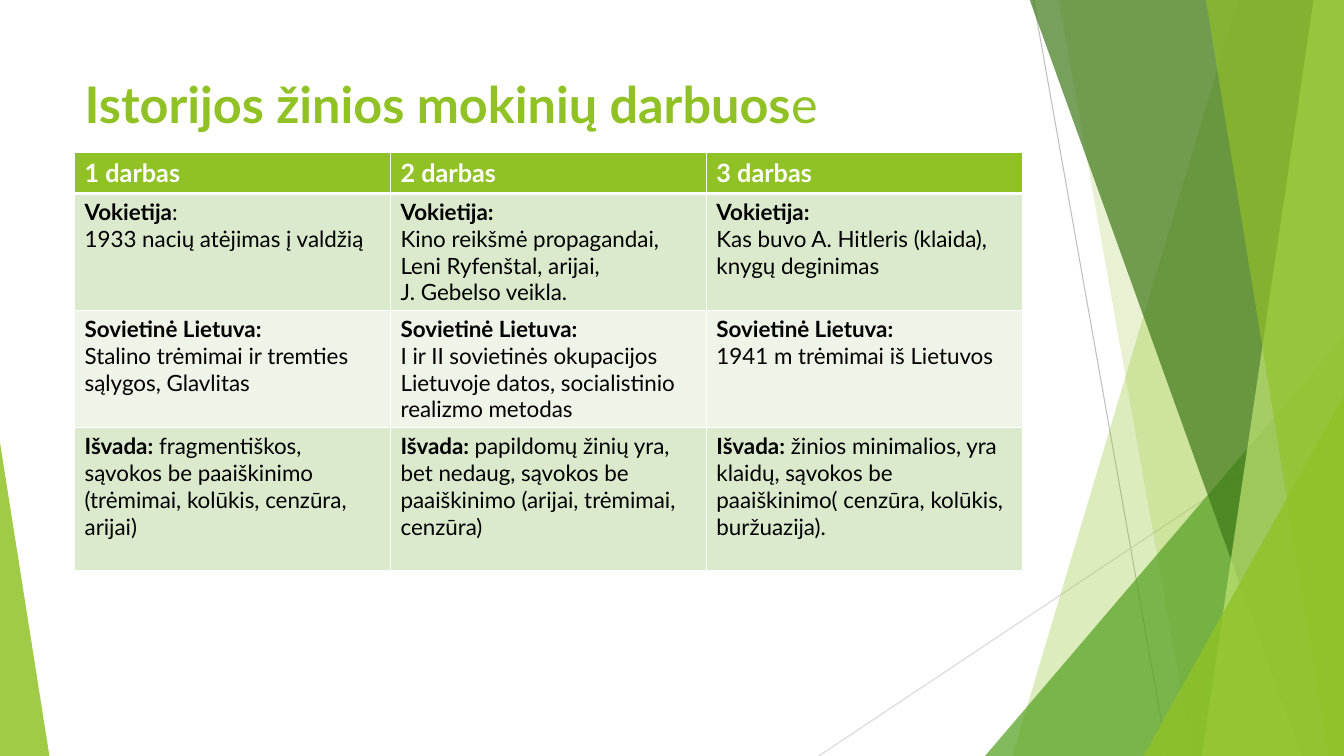
import pptx
import pptx.util
import pptx.dml.color
import pptx.enum.shapes
import pptx.enum.text
import pptx.oxml
import pptx.oxml.ns

Inches = pptx.util.Inches
Pt = pptx.util.Pt
SHAPES = pptx.enum.shapes

THEME = {
    "font": "Lato",
    "title_size": 36, "header_size": 18, "body_size": 16,
    "lime": "90C226", "green": "54A021", "forest": "3F7819", "pale": "C0E474",
    "grey": "BFBFBF", "light_grey": "D9D9D9",
    "white": "FFFFFF", "black": "000000",
    "band_dark": "DBE9CD", "band_light": "EEF4E8",
}


def paint(fill, color, opacity=100):
    fill.solid()
    fill.fore_color.rgb = pptx.dml.color.RGBColor.from_string(THEME[color])
    if opacity < 100:
        rgb = fill._xPr.find(".//" + pptx.oxml.ns.qn("a:srgbClr"))
        alpha = pptx.oxml.parse_xml(
            f'<a:alpha {pptx.oxml.ns.nsdecls("a")} val="{opacity * 1000}"/>')
        rgb.append(alpha)


def write(paragraph, runs, size, color):
    for text, bold in runs:
        run = paragraph.add_run()
        run.text = text
        formats = {"name": THEME["font"], "size": Pt(THEME[size]), "bold": bold}
        for attribute, value in formats.items():
            setattr(run.font, attribute, value)
        paint(run.font.fill, color)


deck = pptx.Presentation()
deck.slide_width, deck.slide_height = Inches(13.33), Inches(7.5)
slide = deck.slides.add_slide(deck.slide_layouts[5])

# Thin lines behind the facets
for x1, y1, x2, y2, color in [
    (10.25, 0, 11.58, 7.5, "grey"),
    (13.33, 4.03, 8.12, 7.5, "light_grey"),
]:
    ray = slide.shapes.add_connector(
        SHAPES.MSO_CONNECTOR.STRAIGHT, Inches(x1), Inches(y1), Inches(x2), Inches(y2))
    ray.line.width = Pt(0.75)
    paint(ray.line.fill, color)
    ray._element.spPr.append(
        pptx.oxml.parse_xml(f'<a:effectLst {pptx.oxml.ns.nsdecls("a")}/>'))

# Facets: bands as (top x, bottom x), wedges as (left, top, width, height, apex)
facets = [
    ((12.28, 10.04), "lime", 30),
    ((10.5, 11.83), "lime", 20),
    ((9.77, 3.33, 3.56, 4.17, 1), "green", 72),
    ((10.21, 12.91), "forest", 70),
    ((13.03, 11.92), "pale", 70),
    ((11.96, 13.18), "lime", 65),
    ((11.34, 3.93, 1.99, 3.57, 1), "lime", 80),
    ((0, 4.39, 0.49, 3.11, 0), "lime", 85),
]
for outline, color, opacity in facets:
    if len(outline) == 2:
        top_x, bottom_x = outline
        builder = slide.shapes.build_freeform(Inches(top_x), Inches(-0.01))
        corners = [(13.33, -0.01), (13.33, 7.5), (bottom_x, 7.5)]
        builder.add_line_segments([(Inches(x), Inches(y)) for x, y in corners])
        facet = builder.convert_to_shape()
    else:
        *box, apex = outline
        facet = slide.shapes.add_shape(
            SHAPES.MSO_SHAPE.ISOSCELES_TRIANGLE, *[Inches(side) for side in box])
        facet.adjustments[0] = apex
    paint(facet.fill, color, opacity)
    facet.line.fill.background()
    facet.shadow.inherit = False

# Title
title = slide.shapes.title
title_box = {"left": 0.74, "top": 0.67, "width": 9.4, "height": 0.71}
for attribute, value in title_box.items():
    setattr(title, attribute, Inches(value))
title_format = {
    "word_wrap": True,
    "auto_size": pptx.enum.text.MSO_AUTO_SIZE.NONE,
    "vertical_anchor": pptx.enum.text.MSO_ANCHOR.MIDDLE,
}
for attribute, value in title_format.items():
    setattr(title.text_frame, attribute, value)
heading = title.text_frame.paragraphs[0]
heading.alignment = pptx.enum.text.PP_ALIGN.LEFT
write(heading, [("Istorijos žinios mokinių darbuos", True), ("e", False)],
      "title_size", "lime")

# Comparison of works: each cell is a list of paragraphs of (text, bold) runs
germany = [("Vokietija:", True)]
lithuania = [("Sovietinė Lietuva:", True)]
comparison = [
    [[[(f"{number} darbas", True)]] for number in (1, 2, 3)],
    [
        [[("Vokietija", True), (":", False)],
         [("1933 nacių atėjimas į valdžią", False)]],
        [germany,
         [("Kino reikšmė propagandai, Leni Ryfenštal, arijai,", False)],
         [("J. Gebelso veikla.", False)]],
        [germany,
         [("Kas buvo A. Hitleris (klaida),", False)],
         [("knygų deginimas", False)]],
    ],
    [
        [lithuania,
         [("Stalino trėmimai ir tremties sąlygos, Glavlitas", False)]],
        [lithuania,
         [("I ir II sovietinės okupacijos Lietuvoje datos, "
           "socialistinio realizmo metodas", False)]],
        [lithuania, [("1941 m trėmimai iš Lietuvos", False)]],
    ],
    [
        [[("Išvada:", True),
          (" fragmentiškos, sąvokos be paaiškinimo "
           "(trėmimai, kolūkis, cenzūra, arijai)", False)]],
        [[("Išvada: ", True),
          ("papildomų žinių yra, bet nedaug, sąvokos be paaiškinimo "
           "(arijai, trėmimai, cenzūra)", False)]],
        [[("Išvada:", True),
          (" žinios minimalios, yra klaidų, sąvokos be "
           "paaiškinimo( cenzūra, kolūkis, buržuazija).", False)]],
    ],
]
row_heights = [0.41, 1.16, 1.16, 1.42]
row_fills = ["lime", "band_dark", "band_light", "band_dark"]
works = slide.shapes.add_table(
    4, 3, Inches(0.74), Inches(1.51), Inches(9.4), Inches(sum(row_heights))).table

for r, cells in enumerate(comparison):
    works.rows[r].height = Inches(row_heights[r])
    size, color = ("body_size", "black") if r else ("header_size", "white")
    borders = {"L": 1, "R": 1, "T": 3 if r == 1 else 1, "B": 1 if r else 3}
    for c, paragraphs in enumerate(cells):
        cell = works.cell(r, c)
        for side, width in borders.items():
            cell._tc.get_or_add_tcPr().append(pptx.oxml.parse_xml(
                f'<a:ln{side} {pptx.oxml.ns.nsdecls("a")} w="{Pt(width)}"><a:solidFill>'
                f'<a:srgbClr val="{THEME["white"]}"/></a:solidFill></a:ln{side}>'))
        paint(cell.fill, row_fills[r])
        for p, runs in enumerate(paragraphs):
            frame = cell.text_frame
            paragraph = frame.add_paragraph() if p else frame.paragraphs[0]
            write(paragraph, runs, size, color)

deck.save("out.pptx")
